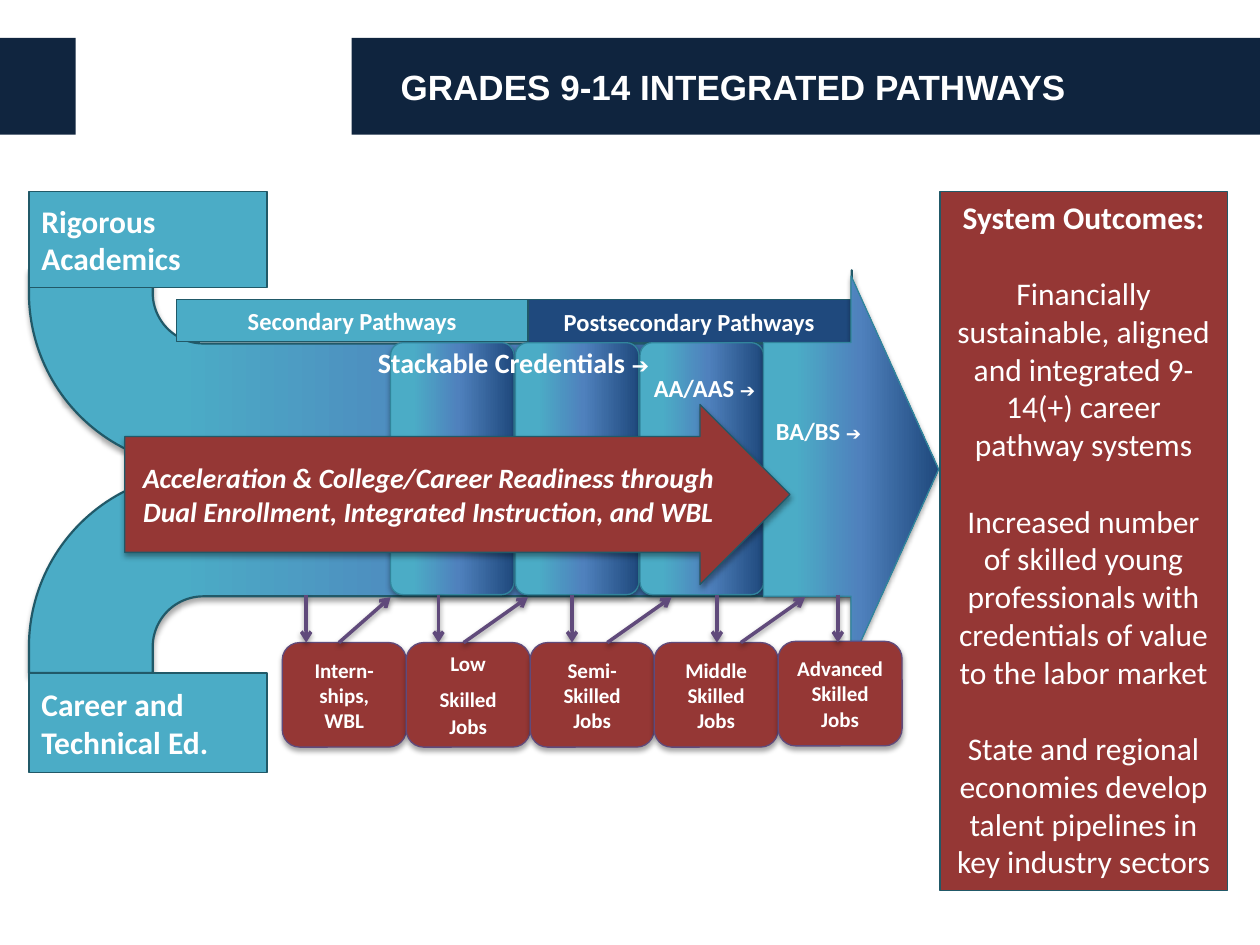
from pptx import Presentation
from pptx.dml.color import RGBColor
from pptx.enum.shapes import MSO_CONNECTOR as LINK, MSO_SHAPE as FORM
from pptx.enum.text import MSO_ANCHOR as ANCHOR, MSO_AUTO_SIZE as AUTO, PP_ALIGN as ALIGN
from pptx.oxml import parse_xml
from pptx.oxml.ns import nsdecls, qn
from pptx.util import Inches, Pt

NAVY = RGBColor(0x10, 0x25, 0x3F)
INK = RGBColor(0x0F, 0x24, 0x3E)
CYAN = RGBColor(0x4B, 0xAC, 0xC6)
BLUE = RGBColor(0x4F, 0x81, 0xBD)
DEEP = RGBColor(0x1F, 0x49, 0x7D)
TEAL = RGBColor(0x21, 0x59, 0x68)
SEA = RGBColor(0x31, 0x85, 0x9C)
RED = RGBColor(0x95, 0x37, 0x35)
PLUM = RGBColor(0x60, 0x4A, 0x7B)
WHITE = RGBColor(0xFF, 0xFF, 0xFF)
FADE = [(2, CYAN), (18, CYAN), (55, BLUE), (100, DEEP)]

COLS, ROWS = 100, 75
WIDE, HIGH = Inches(10), Inches(7.5)


def col(n):
    return round(WIDE * n / COLS)


def row(n):
    return round(HIGH * n / ROWS)


def spot(box):
    x, y, w, h = box
    return col(x), row(y), col(w), row(h)


def put(item, **vals):
    for key, val in vals.items():
        setattr(item, key, val)


def shade(item, alpha=35, dist=1.8):
    item._element.spPr.append(parse_xml(
        f'<a:effectLst {nsdecls("a")}><a:outerShdw blurRad="{Pt(3.1)}" dist="{Pt(dist)}" '
        f'dir="5400000" rotWithShape="0"><a:srgbClr val="000000"><a:alpha val="{alpha * 1000}"/>'
        '</a:srgbClr></a:outerShdw></a:effectLst>'))


def blend(fill, shape):
    fill.gradient()
    fill.gradient_angle = 0
    stops = shape._element.spPr.find(qn("a:gradFill")).find(qn("a:gsLst"))
    for stop in list(stops):
        stops.remove(stop)
    for pos, tint in FADE:
        stops.append(parse_xml(f'<a:gs {nsdecls("a")} pos="{pos * 1000}">'
                               f'<a:srgbClr val="{tint}"/></a:gs>'))


def form(slide, kind, box, fill, edge=TEAL, width=0.75, adj=(), drop=False):
    shape = slide.shapes.add_shape(kind, *spot(box))
    for i, val in enumerate(adj):
        shape.adjustments[i] = val
    if fill is FADE:
        blend(shape.fill, shape)
    else:
        shape.fill.solid()
        shape.fill.fore_color.rgb = fill
    if edge:
        shape.line.color.rgb = edge
        shape.line.width = Pt(width)
    else:
        shape.line.fill.background()
    if drop:
        shade(shape)
    else:
        shape.shadow.inherit = False
    return shape


def write(shape, paras, size, align=ALIGN.CENTER, anchor=ANCHOR.MIDDLE, gap=0):
    frame = shape.text_frame
    put(frame, word_wrap=True, auto_size=AUTO.NONE, vertical_anchor=anchor)
    for i, runs in enumerate(paras):
        para = frame.paragraphs[0] if i == 0 else frame.add_paragraph()
        put(para, alignment=align, space_before=Pt(gap if i else 0))
        for text, *style in runs:
            run = para.add_run()
            run.text = text
            look = dict(size=Pt(size), name="Calibri", bold=True)
            look.update(style[0] if style else {})
            put(run.font, **look)
            run.font.color.rgb = WHITE


def arrow(slide, x1, y1, x2, y2):
    line = slide.shapes.add_connector(LINK.STRAIGHT, col(x1), row(y1), col(x2), row(y2))
    put(line.line, width=Pt(2))
    line.line.color.rgb = PLUM
    line.line._get_or_add_ln().append(parse_xml(f'<a:tailEnd {nsdecls("a")} type="arrow"/>'))
    shade(line, 38, 1.6)


def header(slide, box):
    x, y, w, h = box
    form(slide, FORM.RECTANGLE, (x, y, 6, h), NAVY, None)
    form(slide, FORM.RECTANGLE, (x + 27.9, y, w - 27.9, h), INK, None)
    title = slide.shapes.title
    put(title, **dict(zip(("left", "top", "width", "height"), spot((x + 30.8, y, 64.2, h)))))
    write(title, [[("GRADES 9-14 INTEGRATED PATHWAYS", dict(name="Arial"))]], 20, ALIGN.LEFT)
    slide.shapes._spTree.append(title._element)


def results(slide, box):
    plain = dict(bold=False)
    write(form(slide, FORM.RECTANGLE, box, RED), [
        [("System Outcomes:",)],
        [("Financially sustainable, aligned and integrated 9-14(+) career pathway systems", plain)],
        [("Increased number of skilled young professionals with credentials of value "
          "to the labor market", plain)],
        [("State and regional economies develop talent pipelines in key industry sectors", plain)],
    ], 18, anchor=ANCHOR.TOP, gap=22)


def flow(slide, box):
    x, y, w, h = box
    bend = dict(width=1.25, drop=True)
    form(slide, FORM.BENT_ARROW, (x, y + 10.5, 65.3, 21.5), FADE,
         adj=(0.457, 0.489, 0, 0.644), **bend)
    stage(slide, (x + 39.6, y + 2.4, 25.6, 3.4), DEEP, "Postsecondary Pathways")
    upper = form(slide, FORM.BENT_ARROW, (x, y, 65.3, 21.5), FADE,
                 adj=(0.457, 0.499, 0, 0.644), **bend)
    upper._element.spPr.xfrm.set("flipV", "1")
    for i in range(3):
        form(slide, FORM.ROUNDED_RECTANGLE, (x + 28.7 + 9.9 * i, y + 5.8, 9.8, 20), FADE, SEA,
             adj=(0.101,), drop=True)
    form(slide, FORM.RIGHT_ARROW, (x + w - 13.9, y + 0.5, 13.9, 30.7), FADE, SEA,
         adj=(0.656, 0.5), drop=True)


def stage(slide, box, fill, text):
    write(form(slide, FORM.RECTANGLE, box, fill), [[(text,)]], 14)


def inputs(slide, box):
    x, y, w, h = box
    for text, top, tall in (("Career and Technical Ed.", h - 7.9, 7.9),
                            ("Rigorous Academics", 0, 7.6)):
        write(form(slide, FORM.RECTANGLE, (x, y + top, w, tall), CYAN),
              [[(text,)]], 18, ALIGN.LEFT)


def jobs(slide, box):
    x, y, w, h = box
    step = w / 5
    names = [[("Intern-ships, WBL",)],
             [("Low Skilled",), (" ", dict(size=Pt(18))), ("Jobs",)],
             [("Semi-Skilled Jobs",)], [("Middle Skilled Jobs",)], [("Advanced Skilled Jobs",)]]
    for i, runs in enumerate(names):
        lift = 0.1 if i == 4 else 0
        write(form(slide, FORM.ROUNDED_RECTANGLE, (x + step * i, y - lift, step, h), RED, PLUM,
                   drop=True), [runs], 12)


def links(slide, box):
    x, y, w, h = box
    for dx, run in ((2.6, 4.1), (12.5, 5.1), (23.9, 5.1), (34.5, 5.1)):
        arrow(slide, x + dx, y + h, x + dx + run, y + 0.2)
    for dx in (0, 10.5, 21.1, 32.6, 42.2):
        arrow(slide, x + dx, y, x + dx, y + h)


def boost(slide, box):
    shape = form(slide, FORM.RIGHT_ARROW, box, RED, adj=(0.643, 0.5), drop=True)
    lean = dict(italic=True)
    write(shape, [
        [("Accele", lean), ("r", dict(italic=True, bold=False)),
         ("ation & College/Career Readiness through", lean)],
        [("Dual Enrollment, Integrated Instruction, and WBL", lean)]], 16)


def awards(slide, box):
    x, y, w, h = box
    for text, dx, dy, wide, tall, size, mark in (
            ("Stackable Credentials ", 0, 0, 25.8, 3.7, 16, 12),
            ("AA/AAS ", 21.9, 2.2, 11.8, 3.4, 14, 10.5),
            ("BA/BS ", 31.6, 5.6, 12.1, 3.4, 14, 10.5)):
        label = slide.shapes.add_textbox(*spot((x + dx, y + dy, wide, tall)))
        write(label, [[(text,), ("➔", dict(name="Arial", size=Pt(mark)))]],
              size, ALIGN.LEFT, ANCHOR.TOP)


def main():
    deck = Presentation()
    put(deck, slide_width=WIDE, slide_height=HIGH)
    slide = deck.slides.add_slide(deck.slide_layouts[5])
    header(slide, (0, 3, COLS, 7.7))
    flow(slide, (2.3, 21.4, 72.2, 32))
    results(slide, (74.6, 15.2, 22.8, 55.5))
    jobs(slide, (22.4, 51, 49.2, 8.3))
    inputs(slide, (2.3, 15.2, 18.9, 46.1))
    boost(slide, (9.9, 32.1, 52.8, 14.3))
    links(slide, (24.3, 47.2, 42.2, 3.8))
    awards(slide, (29, 26.9, 43.7, 9))
    stage(slide, (14, 23.8, 27.9, 3.3), CYAN, "Secondary Pathways")
    deck.save("out.pptx")


if __name__ == "__main__":
    main()
